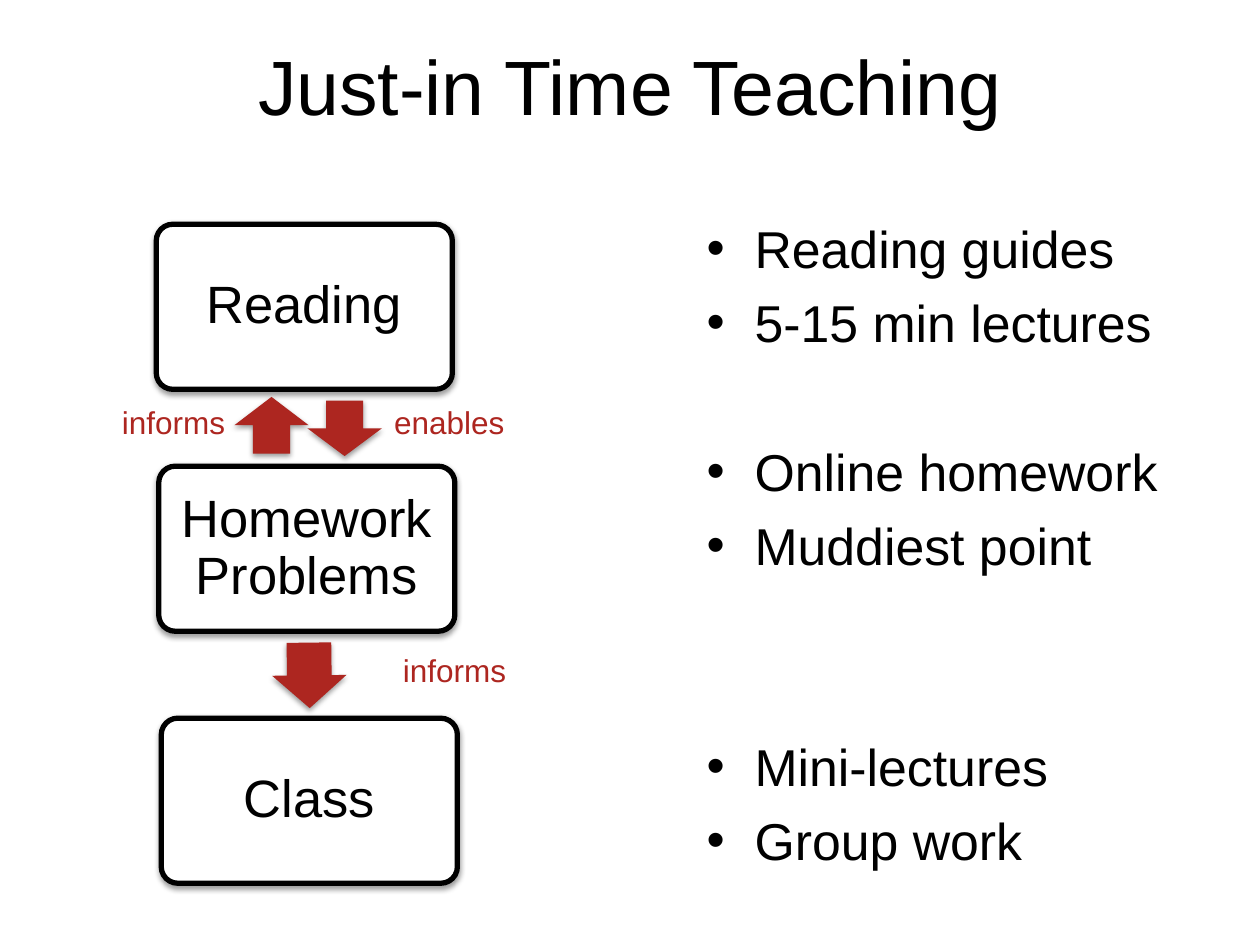
from lxml import etree
from pptx import Presentation
from pptx.dml.color import RGBColor
from pptx.enum.shapes import MSO_SHAPE as Shape
from pptx.enum.text import MSO_ANCHOR as Anchor, PP_ALIGN as Align
from pptx.oxml import parse_xml
from pptx.oxml.ns import nsdecls, qn
from pptx.util import Inches, Pt

BLACK = RGBColor(0x00, 0x00, 0x00)
WHITE = RGBColor(0xFF, 0xFF, 0xFF)
RED = RGBColor(0xAD, 0x26, 0x20)
FONT = "Arial"

TITLE = "Just-in Time Teaching"
STAGES = [("Reading", 1.24, 1.78), ("Homework Problems", 1.26, 3.7), ("Class", 1.28, 5.7)]
STAGE_SIZE = (2.35, 1.31)
ARROWS = [
    (Shape.UP_ARROW, (1.86, 3.15, 0.59, 0.45), 0.5, 0),
    (Shape.DOWN_ARROW, (2.44, 3.18, 0.59, 0.44), 0.5, 0),
    (Shape.DOWN_ARROW, (2.16, 5.1, 0.59, 0.52), 0.6, -0.7),
]
LINKS = [
    ("informs", (0.87, 3.15, 1.03, 0.4)),
    ("enables", (3.03, 3.15, 1.09, 0.4)),
    ("informs", (3.1, 5.12, 1.03, 0.4)),
]
ACTIVITIES = [
    (0, ["Reading guides", "5-15 min lectures"]),
    (49.4, ["Online homework", "Muddiest point"]),
    (90.6, ["Mini-lectures", "Group work"]),
]
ITEM_GAP = 6.9
HANGING = Inches(0.38)


def style(paragraph, size, color=BLACK, align=Align.LEFT):
    paragraph.alignment = align
    font = paragraph.font
    font.name, font.size = FONT, Pt(size)
    font.color.rgb = color


def add_text(slide, box, wrap=True):
    frame = slide.shapes.add_textbox(*map(Inches, box)).text_frame
    frame.word_wrap = wrap
    return frame


def add_shape(slide, kind, box, fill):
    shape = slide.shapes.add_shape(kind, *map(Inches, box))
    shape.fill.solid()
    shape.fill.fore_color.rgb = fill
    shape.line.fill.background()
    shape.shadow.inherit = False
    effects = shape.element.spPr.find(qn("a:effectLst"))
    effects.append(parse_xml(
        f'<a:outerShdw {nsdecls("a")} blurRad="{Pt(3.1)}" dist="{Pt(1.6)}" '
        'dir="5400000" rotWithShape="0"><a:srgbClr val="000000">'
        '<a:alpha val="38000"/></a:srgbClr></a:outerShdw>'))
    return shape


def add_stage(slide, name, left, top):
    stage = add_shape(slide, Shape.ROUNDED_RECTANGLE, (left, top, *STAGE_SIZE), WHITE)
    stage.adjustments[0] = 0.1
    stage.line.color.rgb = BLACK
    stage.line.width = Pt(3)
    frame = stage.text_frame
    frame.word_wrap = True
    frame.vertical_anchor = Anchor.MIDDLE
    frame.margin_left = frame.margin_right = Inches(0.1)
    frame.text = name
    frame.paragraphs[0].line_spacing = 0.9
    style(frame.paragraphs[0], 30, align=Align.CENTER)


def add_bullet(paragraph):
    properties = paragraph._p.get_or_add_pPr()
    properties.set("marL", str(HANGING))
    properties.set("indent", str(-HANGING))
    etree.SubElement(properties, qn("a:buFont")).set("typeface", FONT)
    etree.SubElement(properties, qn("a:buChar")).set("char", "•")


def main():
    deck = Presentation()
    deck.slide_width, deck.slide_height = Inches(10), Inches(7.5)
    slide = deck.slides.add_slide(deck.slide_layouts[6])

    title = add_text(slide, (0.5, 0.19, 9, 0.96))
    title.vertical_anchor = Anchor.MIDDLE
    title.text = TITLE
    style(title.paragraphs[0], 44, align=Align.CENTER)

    activities = add_text(slide, (5.51, 1.67, 3.91, 5.5))
    paragraph = activities.paragraphs[0]
    for group_gap, items in ACTIVITIES:
        for index, item in enumerate(items):
            if paragraph.text:
                paragraph = activities.add_paragraph()
            paragraph.text = item
            add_bullet(paragraph)
            paragraph.space_before = Pt(ITEM_GAP if index else group_gap)
            style(paragraph, 29.6)

    for stage in STAGES:
        add_stage(slide, *stage)

    for kind, box, shaft, rotation in ARROWS:
        arrow = add_shape(slide, kind, box, RED)
        arrow.adjustments[0] = shaft
        arrow.rotation = rotation

    for label, box in LINKS:
        link = add_text(slide, box, wrap=False)
        link.text = label
        style(link.paragraphs[0], 18, RED)

    deck.save("out.pptx")


if __name__ == "__main__":
    main()
